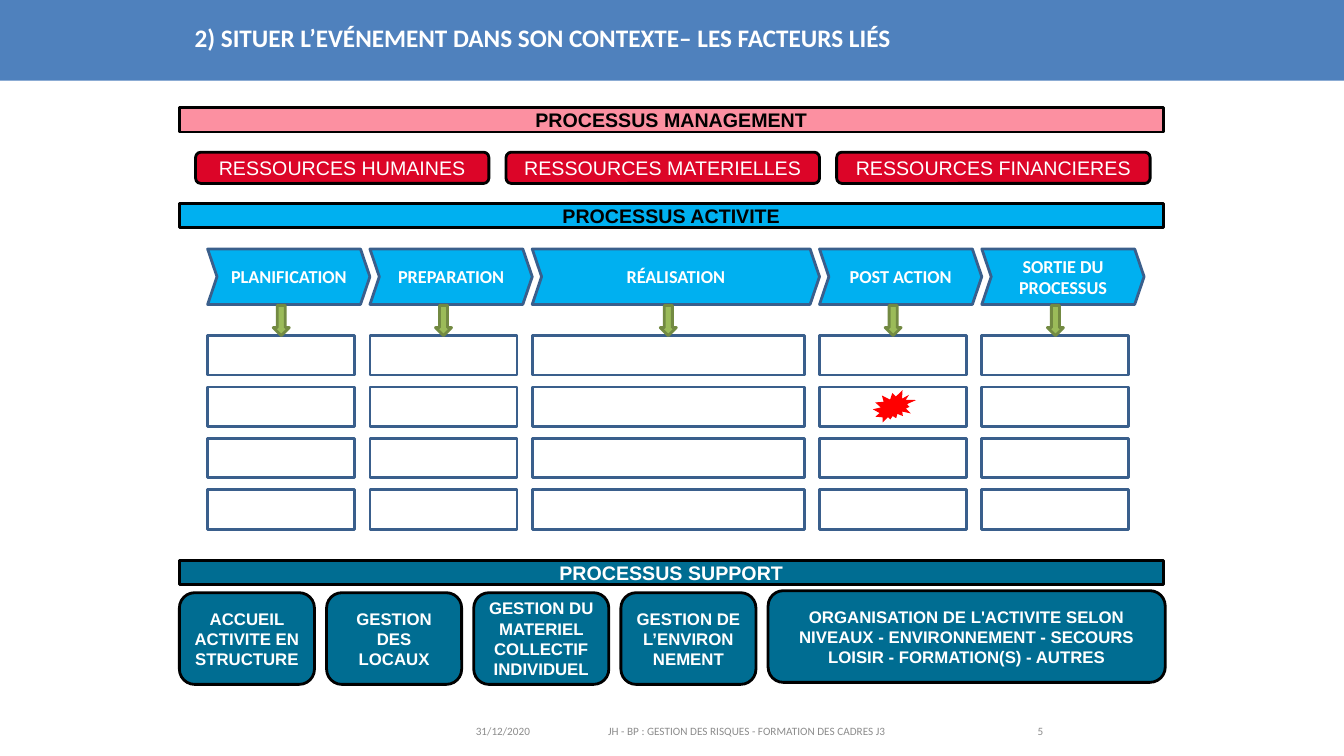
from itertools import accumulate

from pptx import Presentation
from pptx import util as u
from pptx.dml.color import RGBColor
from pptx.enum import shapes, text

# Grid: square cells of a tenth of an inch
CELL = u.Inches(0.1)
COLUMNS, ROWS = 133.33, 75
SHAPE = shapes.MSO_SHAPE
CENTER = text.PP_ALIGN.CENTER

WHITE, BLACK, GREY = "FFFFFF", "000000", "8C8C8C"
PINK, RED, SKY, TEAL = "FC90A1", "DC0528", "00B0F0", "006D92"
NAVY = "3A5F8C"

BAND_LEFT, BAND_WIDTH, BAND_HEIGHT = 17.8, 97.6, 2.4
STEP_LEFT, STEP_TOP, STEP_HEIGHT, STEP_GAP = 20.6, 24.7, 5.5, 1.5
BOX_TOP, BOX_HEIGHT, BOX_PITCH, BOX_ROWS = 33.3, 3.9, 5.1, 4

BANDS = [
    ("PROCESSUS MANAGEMENT", 10.7, PINK, BLACK),
    ("PROCESSUS ACTIVITE", 20.2, SKY, BLACK),
    ("PROCESSUS SUPPORT", 55.6, TEAL, WHITE),
]
RESOURCES = [
    ("RESSOURCES HUMAINES", 29.1),
    ("RESSOURCES MATERIELLES", 31.1),
    ("RESSOURCES FINANCIERES", 31.1),
]
STEPS = [
    ("PLANIFICATION", 16.1),
    ("PREPARATION", 16.1),
    ("RÉALISATION", 28.5),
    ("POST ACTION", 16.1),
    ("SORTIE DU PROCESSUS", 16.1),
]
SUPPORTS = [
    ("ACCUEIL ACTIVITE EN STRUCTURE", 13.4, 58.8),
    ("GESTION DES LOCAUX", 13.4, 58.8),
    ("GESTION DU MATERIEL COLLECTIF INDIVIDUEL", 13.4, 58.8),
    ("GESTION DE L’ENVIRON NEMENT", 13.4, 58.8),
    ("ORGANISATION DE L'ACTIVITE SELON NIVEAUX - ENVIRONNEMENT - SECOURS "
     "LOISIR - FORMATION(S) - AUTRES", 39.4, 58.6),
]
FOOTER = [
    ("31/12/2020", 46.3, 7.5, text.PP_ALIGN.LEFT),
    ("JH - BP : GESTION DES RISQUES - FORMATION DES CADRES J3", 59, 30.2, CENTER),
    ("5", 94.2, 10.2, text.PP_ALIGN.RIGHT),
]


def cells(*lengths):
    return [round(length * CELL) for length in lengths]


def color(hex_code):
    return RGBColor.from_string(hex_code)


def lefts(start, widths, gap=0):
    """Left edges of neighbours set out from start with equal gaps."""
    return list(accumulate((width + gap for width in widths), initial=start))


def write(holder, wording, size, font, ink, bold=False, align=CENTER):
    frame = holder.text_frame
    frame.text = wording
    frame.word_wrap = True
    frame.vertical_anchor = text.MSO_ANCHOR.MIDDLE
    frame.margin_left = frame.margin_right = u.Inches(0.09)
    frame.margin_top = frame.margin_bottom = 0
    paragraph = frame.paragraphs[0]
    paragraph.alignment = align
    for run in paragraph.runs:
        run.font.size = u.Pt(size)
        run.font.name = font
        run.font.bold = bold
        run.font.color.rgb = color(ink)


def block(slide, kind, area, fill=None, line=None):
    figure = slide.shapes.add_shape(kind, *cells(*area))
    figure.shadow.inherit = False
    if fill:
        figure.fill.solid()
        figure.fill.fore_color.rgb = color(fill)
    else:
        figure.fill.background()
    if line:
        figure.line.color.rgb = color(line)
        figure.line.width = u.Pt(2)
    else:
        figure.line.fill.background()
    return figure


def label(slide, area, wording, size, ink, bold, align):
    holder = slide.shapes.add_textbox(*cells(*area))
    write(holder, wording, size, "Calibri", ink, bold, align)


def step(slide, wording, left, width):
    """A chevron, its arrow and the column of boxes below."""
    chevron = block(slide, SHAPE.CHEVRON, (left, STEP_TOP, width, STEP_HEIGHT), SKY, NAVY)
    chevron.adjustments[0] = 0.169
    write(chevron, wording, 13, "Calibri", WHITE, True)

    box_width = width - STEP_GAP
    for row in range(BOX_ROWS):
        area = (left, BOX_TOP + row * BOX_PITCH, box_width, BOX_HEIGHT)
        block(slide, SHAPE.RECTANGLE, area, line=NAVY)

    arrow_area = (left + box_width / 2 - 1.5, 31, 3, 1.6)
    arrow = block(slide, SHAPE.RIGHT_ARROW, arrow_area, "9BBB59", "738A42")
    arrow.rotation = 90


def main():
    deck = Presentation()
    deck.slide_width, deck.slide_height = cells(COLUMNS, ROWS)
    slide = deck.slides.add_slide(deck.slide_layouts[6])

    # Header
    block(slide, SHAPE.RECTANGLE, (0, 0, COLUMNS, 8), "4F81BD")
    label(slide, (18.4, 0.6, 108.5, 6.2),
          "2) SITUER L’EVÉNEMENT DANS SON CONTEXTE– LES FACTEURS LIÉS",
          18, WHITE, True, text.PP_ALIGN.LEFT)

    # Process bands
    for wording, top, fill, ink in BANDS:
        area = (BAND_LEFT, top, BAND_WIDTH, BAND_HEIGHT)
        band = block(slide, SHAPE.RECTANGLE, area, fill, BLACK)
        write(band, wording, 14, "Arial", ink, True)

    # Management resources
    resource_lefts = lefts(19.4, [width for _, width in RESOURCES], 1.7)
    for (wording, width), left in zip(RESOURCES, resource_lefts):
        resource = block(slide, SHAPE.ROUNDED_RECTANGLE, (left, 15.1, width, 3.1), RED, BLACK)
        write(resource, wording, 14, "Arial", WHITE)

    # Activity steps
    step_lefts = lefts(STEP_LEFT, [width for _, width in STEPS])
    for (wording, width), left in zip(STEPS, step_lefts):
        step(slide, wording, left, width)

    # Event located in the second box of POST ACTION
    block(slide, SHAPE.EXPLOSION2, (86.6, 38.7, 4.3, 3.2), "FF0000")

    # Support processes
    support_lefts = lefts(BAND_LEFT, [width for _, width, _ in SUPPORTS], 1.2)
    for (wording, width, top), left in zip(SUPPORTS, support_lefts):
        support = block(slide, SHAPE.ROUNDED_RECTANGLE, (left, top, width, 9.1), TEAL, BLACK)
        write(support, wording, 12, "Arial", WHITE, True)

    # Footer
    for wording, left, width, align in FOOTER:
        label(slide, (left, 71.4, width, 2.2), wording, 8, GREY, False, align)

    deck.save("out.pptx")


if __name__ == "__main__":
    main()
